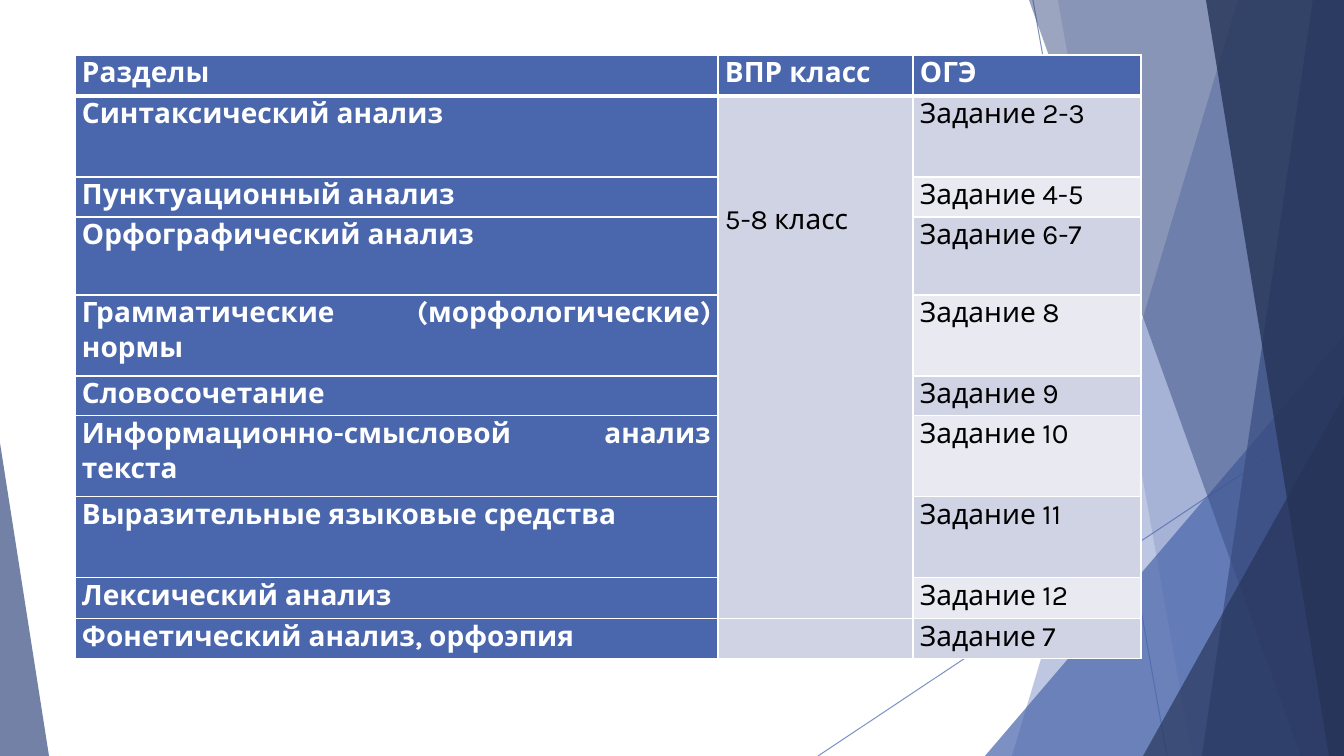
import pptx
import pptx.util
import pptx.dml.color
import pptx.enum.shapes
import pptx.enum.text
import pptx.oxml
import pptx.oxml.ns
import lxml.etree

# Content
HEADER = ("Разделы", "ВПР класс", "ОГЭ")
GRADES = "5-8 класс"
TOPICS = [  # section, exam task, row height
    ("Синтаксический анализ", "Задание 2-3", 81),
    ("Пунктуационный анализ", "Задание 4-5", 40),
    ("Орфографический анализ", "Задание 6-7", 78),
    ("Грамматические (морфологические) нормы", "Задание 8", 81),
    ("Словосочетание", "Задание 9", 40),
    ("Информационно-смысловой анализ текста", "Задание 10", 81),
    ("Выразительные языковые средства", "Задание 11", 81),
    ("Лексический анализ", "Задание 12", 41),
    ("Фонетический анализ, орфоэпия", "Задание 7", 40),
]
COLUMNS = (643, 195, 228)
HEADER_HEIGHT = 41
TABLE_LEFT, TABLE_TOP = 75, 55
MERGED_ROWS = 8
GRADES_TOP = 106

FONT = "Karla"
BLUE, NAVY, DARK = "4A66AC", "384C81", "253356"
WHITE, BLACK = "FFFFFF", "000000"
BANDS = ("D0D3E3", "E9EAF1")

W, H = 1344, 756
RAYS = [((1033, 0), (1167, H)), ((W, 406), (818, H))]
# Facets from back to front: top x and bottom x of a slanted band reaching
# the right edge, or left, top, width and apex position of a triangle
FACETS = [
    ("band", (1238, 1012), BLUE, 36),
    ("band", (1058, 1192), BLUE, 20),
    ("triangle", (985, 336, 359, 1), BLUE, 72),
    ("band", (1029, 1301), NAVY, 50),
    ("band", (1313, 1202), NAVY, 70),
    ("band", (1206, 1329), DARK, 80),
    ("triangle", (1143, 396, 201, 1), DARK, 66),
    ("triangle", (0, 443, 49, 0), NAVY, 70),
]


def px(n):
    return pptx.util.Emu(round(n * 914400 / 100.8))


def rgb(color):
    return pptx.dml.color.RGBColor.from_string(color)


def set_alpha(shape_format, percent):
    clr = shape_format._xPr.find(".//" + pptx.oxml.ns.qn("a:srgbClr"))
    alpha = lxml.etree.SubElement(clr, pptx.oxml.ns.qn("a:alpha"))
    alpha.set("val", str(percent * 1000))


def set_borders(cell, widths):
    tcPr = cell._tc.get_or_add_tcPr()
    for side, width in zip("LRTB", widths):
        tcPr.append(pptx.oxml.parse_xml(
            f'<a:ln{side} {pptx.oxml.ns.nsdecls("a")} w="{pptx.util.Pt(width)}">'
            f'<a:solidFill><a:srgbClr val="{WHITE}"/></a:solidFill></a:ln{side}>'))


def write_cell(cell, text, fill, color, bold, top=0):
    cell.fill.solid()
    cell.fill.fore_color.rgb = rgb(fill)
    cell.margin_left = cell.margin_right = px(7)
    cell.margin_top, cell.margin_bottom = px(top), 0
    cell.text_frame.text = text
    p = cell.text_frame.paragraphs[0]
    p.alignment = pptx.enum.text.PP_ALIGN.JUSTIFY
    p.line_spacing = 1.07
    for r in p.runs:
        r.font.name, r.font.size, r.font.bold = FONT, pptx.util.Pt(20), bold
        r.font.color.rgb = rgb(color)


prs = pptx.Presentation()
prs.slide_width, prs.slide_height = px(W), px(H)
s = prs.slides.add_slide(prs.slide_layouts[6])

# Thin rays
for (x1, y1), (x2, y2) in RAYS:
    ray = s.shapes.add_connector(
        pptx.enum.shapes.MSO_CONNECTOR.STRAIGHT, px(x1), px(y1), px(x2), px(y2))
    ray.line.width = pptx.util.Pt(0.75)
    ray.line.color.rgb = rgb(BLUE)
    set_alpha(ray.line.fill, 70)
    lxml.etree.SubElement(ray._element.spPr, pptx.oxml.ns.qn("a:effectLst"))

# Translucent facets
for kind, geometry, color, opacity in FACETS:
    if kind == "band":
        top_x, bottom_x = geometry
        fb = s.shapes.build_freeform(top_x, 0, scale=px(1))
        fb.add_line_segments([(W, 0), (W, H), (bottom_x, H)], close=True)
        sp = fb.convert_to_shape()
    else:
        left, top, width, apex = geometry
        sp = s.shapes.add_shape(
            pptx.enum.shapes.MSO_SHAPE.ISOSCELES_TRIANGLE,
            px(left), px(top), px(width), px(H - top))
        sp.adjustments[0] = apex
    sp.shadow.inherit = False
    sp.line.fill.background()
    sp.fill.solid()
    sp.fill.fore_color.rgb = rgb(color)
    set_alpha(sp.fill, opacity)

# Table grid
heights = [HEADER_HEIGHT] + [height for _, _, height in TOPICS]
table = s.shapes.add_table(
    len(heights), len(COLUMNS), px(TABLE_LEFT), px(TABLE_TOP),
    px(sum(COLUMNS)), px(sum(heights))).table
table.horz_banding = False
for column, width in zip(table.columns, COLUMNS):
    column.width = px(width)
for row, height in zip(table.rows, heights):
    row.height = px(height)
for i in range(len(heights)):
    for cell in table.rows[i].cells:
        set_borders(cell, (1, 1, 3 if i == 1 else 1, 3 if i == 0 else 1))

# Table text
for j, title in enumerate(HEADER):
    write_cell(table.cell(0, j), title, BLUE, WHITE, True)
for i, (topic, task, _) in enumerate(TOPICS, 1):
    write_cell(table.cell(i, 0), topic, BLUE, WHITE, True)
    write_cell(table.cell(i, 1), GRADES if i == 1 else "", BANDS[0], BLACK, False,
               GRADES_TOP if i == 1 else 0)
    write_cell(table.cell(i, 2), task, BANDS[(i - 1) % 2], BLACK, False)
table.cell(1, 1).merge(table.cell(MERGED_ROWS, 1))

prs.save("out.pptx")
